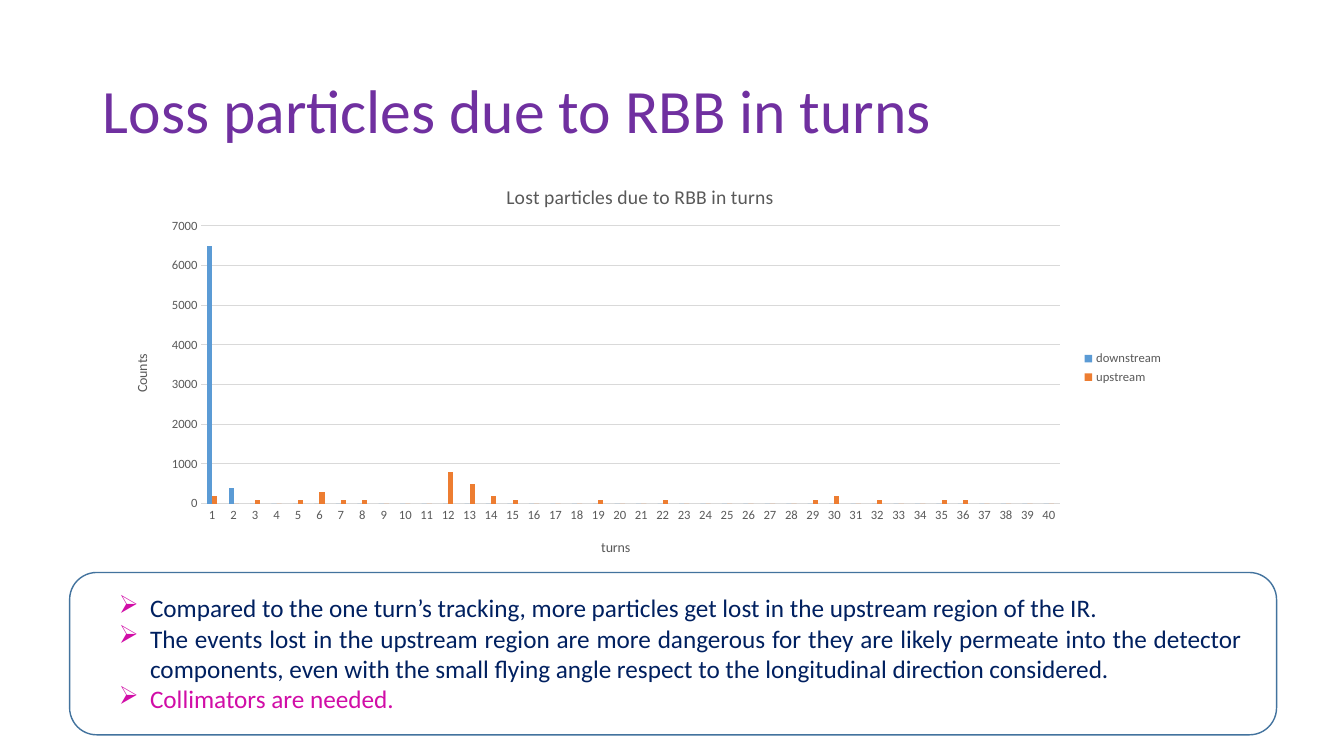
from dataclasses import dataclass
from lxml import etree
from pptx import Presentation
from pptx.chart.data import CategoryChartData
from pptx.dml.color import RGBColor
from pptx.enum.chart import XL_CHART_TYPE, XL_LEGEND_POSITION, XL_TICK_MARK
from pptx.enum.shapes import MSO_SHAPE
from pptx.enum.text import MSO_ANCHOR, MSO_AUTO_SIZE, PP_ALIGN
from pptx.oxml.ns import qn
from pptx.util import Inches, Pt

COLUMN = XL_CHART_TYPE.COLUMN_CLUSTERED
RIGHT = XL_LEGEND_POSITION.RIGHT
NO_TICK = XL_TICK_MARK.NONE
ROUND = MSO_SHAPE.ROUNDED_RECTANGLE
MIDDLE, TOP = MSO_ANCHOR.MIDDLE, MSO_ANCHOR.TOP
LEFT, JUSTIFY = PP_ALIGN.LEFT, PP_ALIGN.JUSTIFY
FIXED = MSO_AUTO_SIZE.NONE


@dataclass(frozen=True)
class Theme:
    font: str = "Calibri"
    title: str = "7030A0"
    text: str = "002060"
    accent: str = "D10DA7"
    frame: str = "43739E"
    grey: str = "595959"
    grid: str = "D9D9D9"
    bars: tuple = ("5B9BD5", "ED7D31")
    head: int = 44
    body: int = 18
    chart: int = 14
    axis: int = 10
    tick: int = 9


def assign(target, values):
    for name, value in values.items():
        setattr(target, name, value)


def place(parent, index, **shares):
    """Put a chart part at shares of the chart's size."""
    for old in parent.findall(qn("c:layout")):
        parent.remove(old)
    layout = etree.Element(qn("c:layout"))
    manual = etree.SubElement(layout, qn("c:manualLayout"))
    for tag, value in shares.items():
        etree.SubElement(manual, qn("c:" + tag)).set("val", str(value))
    parent.insert(index, layout)


class Deck:
    def __init__(self, theme):
        self.theme = theme
        self.prs = Presentation()
        assign(self.prs, {"slide_width": Inches(13.33), "slide_height": Inches(7.5)})
        self.slide = self.prs.slides.add_slide(self.prs.slide_layouts[5])

    def area(self, left, top, width, height):
        """Turn cells of a 100 by 100 grid into slide lengths."""
        col, row = self.prs.slide_width / 100, self.prs.slide_height / 100
        return [round(n) for n in (left * col, top * row, width * col, height * row)]

    def style(self, font, size, color):
        assign(font, {"name": self.theme.font, "size": Pt(size), "bold": False})
        font.color.rgb = RGBColor.from_string(color)

    def stroke(self, line, color, width):
        line.color.rgb = RGBColor.from_string(color)
        line.width = Pt(width)

    def title(self, text, cells):
        shape = self.slide.shapes.title
        assign(shape, dict(zip(("left", "top", "width", "height"), self.area(*cells))))
        frame = shape.text_frame
        frame.text = text
        assign(frame, {"vertical_anchor": MIDDLE, "word_wrap": True, "auto_size": FIXED})
        para = frame.paragraphs[0]
        assign(para, {"alignment": LEFT, "line_spacing": 0.9})
        self.style(para.runs[0].font, self.theme.head, self.theme.title)

    def label(self, owner, text, size, x, y):
        frame = owner.text_frame
        frame.text = text
        self.style(frame.paragraphs[0].runs[0].font, size, self.theme.grey)
        place(owner.element, 1, xMode="edge", yMode="edge", x=x, y=y)

    def chart(self, title, names, data, cells):
        look = self.theme
        chart = self.slide.shapes.add_chart(COLUMN, *self.area(*cells), data).chart
        self.style(chart.font, look.axis, look.grey)

        # Bars
        plot = chart.plots[0]
        assign(plot, {"gap_width": 219, "overlap": 0, "vary_by_categories": False})
        for series, color in zip(plot.series, look.bars):
            series.format.fill.solid()
            series.format.fill.fore_color.rgb = RGBColor.from_string(color)

        # Axes
        turns, counts = chart.category_axis, chart.value_axis
        for axis in (turns, counts):
            assign(axis, {"major_tick_mark": NO_TICK, "minor_tick_mark": NO_TICK})
            self.style(axis.tick_labels.font, look.tick, look.grey)
        self.stroke(turns.format.line, look.grid, 0.75)
        counts.format.line.fill.background()
        assign(counts, {"minimum_scale": 0, "maximum_scale": 7000, "major_unit": 1000})
        self.stroke(counts.major_gridlines.format.line, look.grid, 0.75)

        # Titles, legend and plot area
        self.label(chart.chart_title, title, look.chart, 0.37, 0.04)
        self.label(turns.axis_title, names[0], look.axis, 0.46, 0.91)
        self.label(counts.axis_title, names[1], look.axis, 0.02, 0.46)
        chart.has_legend = True
        assign(chart.legend, {"position": RIGHT, "include_in_layout": False})
        self.style(chart.legend.font, look.tick, look.grey)
        area = chart._chartSpace.chart.plotArea
        place(area, 0, layoutTarget="inner", xMode="edge", yMode="edge",
              x=0.087, y=0.153, w=0.806, h=0.679)

    def bullets(self, items, cells):
        box = self.slide.shapes.add_textbox(*self.area(*cells))
        frame = box.text_frame
        assign(frame, {"word_wrap": True, "vertical_anchor": TOP})
        for i, (text, color) in enumerate(items):
            para = frame.paragraphs[0] if i == 0 else frame.add_paragraph()
            para.alignment = JUSTIFY
            props = para._p.get_or_add_pPr()
            indent = Inches(0.31)
            props.set("marL", str(indent))
            props.set("indent", str(-indent))
            tint = etree.SubElement(props, qn("a:buClr"))
            etree.SubElement(tint, qn("a:srgbClr")).set("val", self.theme.accent)
            etree.SubElement(props, qn("a:buChar")).set("char", "➢")
            run = para.add_run()
            run.text = text
            self.style(run.font, self.theme.body, color)

    def frame(self, cells):
        shape = self.slide.shapes.add_shape(ROUND, *self.area(*cells))
        shape.shadow.inherit = False
        shape.fill.background()
        self.stroke(shape.line, self.theme.frame, 1)


def losses():
    """Counts per turn; turns not listed have none."""
    turns = range(1, 41)
    down = {1: 6500, 2: 400}
    up = {1: 200, 6: 300, 12: 800, 13: 500, 14: 200, 30: 200}
    up.update(dict.fromkeys((3, 5, 7, 8, 15, 19, 22, 29, 32, 35, 36), 100))
    data = CategoryChartData()
    data.categories = [str(turn) for turn in turns]
    for name, found in (("downstream", down), ("upstream", up)):
        data.add_series(name, [found.get(turn, 0) for turn in turns])
    return data


def main():
    theme = Theme()
    deck = Deck(theme)
    deck.title("Loss particles due to RBB in turns", (6.9, 5.33, 86.25, 19.33))
    deck.chart("Lost particles due to RBB in turns", ("turns", "Counts"),
               losses(), (8.1, 21.6, 79.22, 54.13))
    deck.bullets([
        ("Compared to the one turn’s tracking, more particles get lost in the "
         "upstream region of the IR.", theme.text),
        ("The events lost in the upstream region are more dangerous for they are "
         "likely permeate into the detector components, even with the small flying "
         "angle respect to the longitudinal direction considered.", theme.text),
        ("Collimators are needed.", theme.accent),
    ], (8.1, 77.73, 85.07, 17.47))
    deck.frame((5.18, 75.73, 89.8, 21.47))
    deck.prs.save("out.pptx")


if __name__ == "__main__":
    main()
